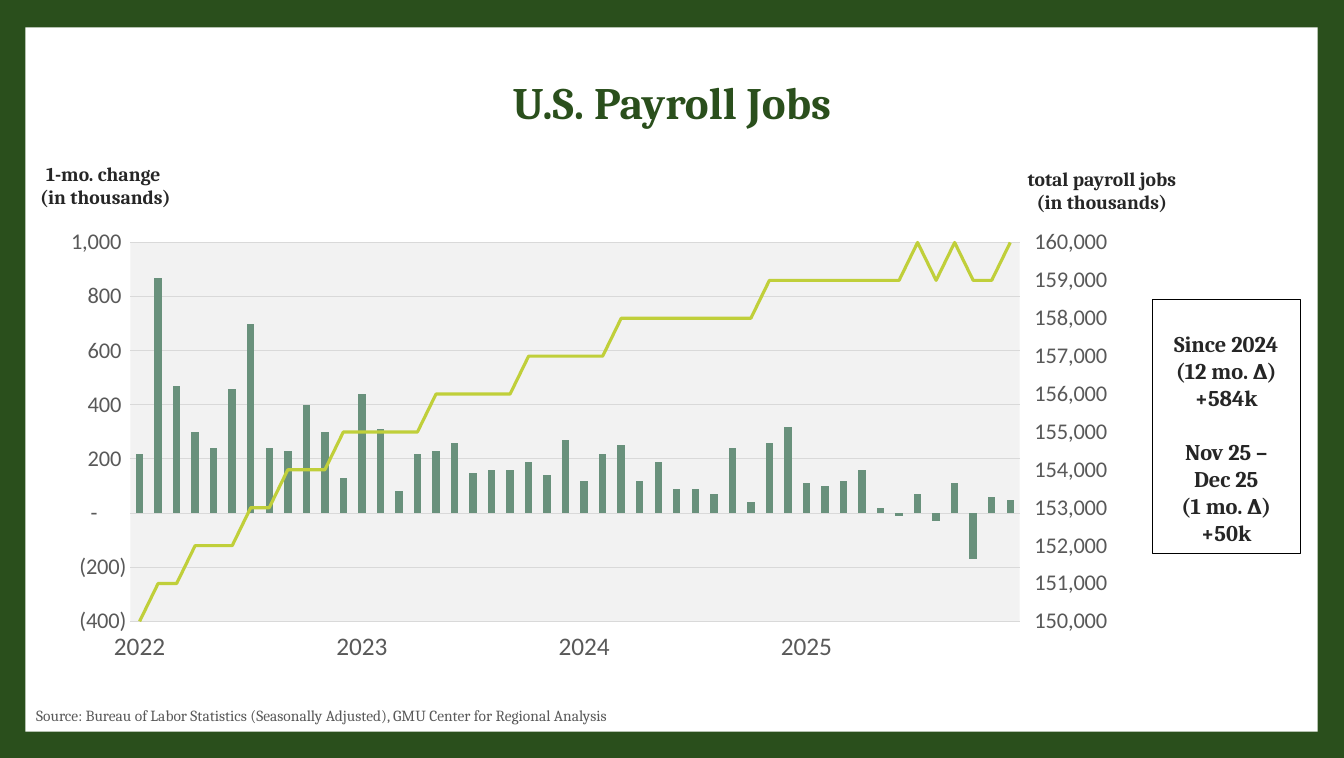
from copy import deepcopy

from lxml import etree
from pptx import Presentation
from pptx.chart.axis import ValueAxis
from pptx.chart.data import CategoryChartData
from pptx.dml.color import RGBColor
from pptx.enum import chart as ch, shapes, text
from pptx.oxml import parse_xml
from pptx.oxml.ns import nsdecls, qn
from pptx.util import Inches, Pt

GREEN = RGBColor(0x2A, 0x4F, 0x1C)
WHITE = RGBColor(0xFF, 0xFF, 0xFF)
BLACK = RGBColor(0, 0, 0)
DARK = RGBColor(0x26, 0x26, 0x26)
GRAY = RGBColor(0x59, 0x59, 0x59)
GRID = RGBColor(0xD9, 0xD9, 0xD9)
BAR = RGBColor(0x69, 0x91, 0x7C)
LIME = RGBColor(0xC0, 0xCF, 0x3A)

LEFT, CENTER = text.PP_ALIGN.LEFT, text.PP_ALIGN.CENTER
# Lines, left, top, width, height, size, bold, colour, alignment
LABELS = [
    (["1-mo. change ", "(in thousands)"], 0.28, 1.55, 1.53, 0.57, 14, True, DARK, CENTER),
    (["total payroll jobs", "(in thousands)"], 10.04, 1.6, 1.73, 0.57, 14, True, DARK, CENTER),
    (["U.S. Payroll Jobs"], 4.92, 0.69, 3.46, 0.64, 32, True, GREEN, CENTER),
    (["Source: Bureau of Labor Statistics (Seasonally Adjusted), GMU Center for Regional Analysis"],
     0.26, 6.94, 6.26, 0.29, 11, False, GRAY, LEFT),
]
SUMMARY = [
    ["Since 2024", "(12 mo. ∆)", "+584k"],
    ["Nov 25 –", "Dec 25", "(1 mo. ∆)", "+50k"],
]
YEARS = ["2022", "2023", "2024", "2025"]
MONTHLY_CHANGE = [
    220, 870, 470, 300, 240, 460, 700, 240, 230, 400, 300, 130,
    440, 310, 80, 220, 230, 260, 150, 160, 160, 190, 140, 270,
    120, 220, 250, 120, 190, 90, 90, 70, 240, 40, 260, 320,
    110, 100, 120, 160, 20, -10, 70, -30, 110, -170, 60, 50,
]
TOTAL_JOBS = [
    150000, 151000, 151000, 152000, 152000, 152000, 153000, 153000, 154000, 154000, 154000, 155000,
    155000, 155000, 155000, 155000, 156000, 156000, 156000, 156000, 156000, 157000, 157000, 157000,
    157000, 157000, 158000, 158000, 158000, 158000, 158000, 158000, 158000, 158000, 159000, 159000,
    159000, 159000, 159000, 159000, 159000, 159000, 160000, 159000, 160000, 159000, 159000, 160000,
]
NUMBER_FORMAT = '_(* #,##0_);_(* \\(#,##0\\);_(* "-"??_);_('
CHART = (0.43, 2.18, 10.8, 4.46)
PLOT = (1.29, 2.4, 8.8, 3.75)


def style(p, size, bold, color, align):
    p.alignment = align
    p.font.name, p.font.size, p.font.bold = "Cambria", Pt(size), bold
    p.font.color.rgb = color


def write(tf, lines, *look):
    for i, line in enumerate(lines):
        p = tf.paragraphs[0] if i == 0 else tf.add_paragraph()
        p.text = line
        style(p, *look)


def add_box(s, x, y, w, h):
    sp = s.shapes.add_shape(shapes.MSO_SHAPE.RECTANGLE, *map(Inches, (x, y, w, h)))
    sp.shadow.inherit = False
    return sp


def style_axis(axis, size):
    axis.major_tick_mark = axis.minor_tick_mark = ch.XL_TICK_MARK.NONE
    font = axis.tick_labels.font
    font.name, font.size, font.color.rgb = "Calibri", Pt(size), GRAY


def set_scale(axis, low, high, step):
    axis.minimum_scale, axis.maximum_scale, axis.major_unit = low, high, step


def move_to_right_axis(chart):
    """Turn the second series into a line on its own axis at the right."""
    area = chart._chartSpace.find(".//" + qn("c:plotArea"))
    bars, cat, val = (area.find(qn("c:" + tag)) for tag in ("barChart", "catAx", "valAx"))
    ser = bars.findall(qn("c:ser"))[1]
    for flag in ser.findall(qn("c:invertIfNegative")):
        ser.remove(flag)
    line = parse_xml(
        f'<c:lineChart {nsdecls("c")}><c:grouping val="standard"/><c:varyColors val="0"/>'
        '<c:marker val="1"/><c:axId val="5001"/><c:axId val="5002"/></c:lineChart>')
    line.insert(2, ser)
    bars.addnext(line)

    right_cat, right_val = deepcopy(cat), deepcopy(val)
    val.addnext(right_cat)
    right_cat.addnext(right_val)
    for ax, own, other in ((right_cat, "5001", "5002"), (right_val, "5002", "5001")):
        ax.find(qn("c:axId")).set("val", own)
        ax.find(qn("c:crossAx")).set("val", other)
    right_val.find(qn("c:axPos")).set("val", "r")
    right_val.find(qn("c:crosses")).set("val", "max")
    ValueAxis(right_cat).visible = False
    axis = ValueAxis(right_val)
    axis.has_major_gridlines = False
    axis.major_tick_mark = ch.XL_TICK_MARK.OUTSIDE
    set_scale(axis, 150000, 160000, 1000)


def place_plot(chart):
    """Fix the inner plot area at PLOT and give it a light fill."""
    area = chart._chartSpace.find(".//" + qn("c:plotArea"))
    for layout in area.findall(qn("c:layout")):
        area.remove(layout)
    shares = [(PLOT[0] - CHART[0]) / CHART[2], (PLOT[1] - CHART[1]) / CHART[3],
              PLOT[2] / CHART[2], PLOT[3] / CHART[3]]
    parts = "".join(f'<c:{k} val="{v:.4f}"/>' for k, v in zip("xywh", shares))
    area.insert(0, parse_xml(
        f'<c:layout {nsdecls("c")}><c:manualLayout><c:layoutTarget val="inner"/>'
        f'<c:xMode val="edge"/><c:yMode val="edge"/>{parts}</c:manualLayout></c:layout>'))
    area.append(parse_xml(
        f'<c:spPr {nsdecls("c", "a")}><a:solidFill><a:srgbClr val="F2F2F2"/></a:solidFill></c:spPr>'))


def add_jobs_chart(s):
    data = CategoryChartData()
    data.categories = [label for year in YEARS for label in [year] + [""] * 11]
    data.add_series("Series 1", MONTHLY_CHANGE)
    data.add_series("Series 2", TOTAL_JOBS)
    chart = s.shapes.add_chart(
        ch.XL_CHART_TYPE.COLUMN_CLUSTERED, *map(Inches, CHART), data).chart
    chart.has_legend = chart.has_title = False
    chart.font.name, chart.font.size = "Calibri", Pt(10)
    plot = chart.plots[0]
    plot.gap_width, plot.vary_by_categories = 150, False

    cat, val = chart.category_axis, chart.value_axis
    style_axis(cat, 18)
    cat.tick_label_position = ch.XL_TICK_LABEL_POSITION.LOW
    cat.format.line.color.rgb, cat.format.line.width = GRID, Pt(0.75)
    cat._element.find(".//" + qn("a:bodyPr")).set("rot", "-60000000")
    skip = etree.Element(qn("c:tickLblSkip"), val="12")
    cat._element.find(qn("c:noMultiLvlLbl")).addprevious(skip)
    style_axis(val, 16)
    val.format.line.fill.background()
    val.tick_labels.number_format = NUMBER_FORMAT
    val.tick_labels.number_format_is_linked = False
    grid = val.major_gridlines.format.line
    grid.color.rgb, grid.width = GRID, Pt(0.75)
    set_scale(val, -400, 1000, 200)

    move_to_right_axis(chart)
    place_plot(chart)
    change, total = chart.plots[0].series[0], chart.plots[1].series[0]
    change.format.fill.solid()
    change.format.fill.fore_color.rgb = BAR
    change.invert_if_negative = False
    total.format.line.color.rgb, total.format.line.width = LIME, Pt(2.25)
    total.marker.style = ch.XL_MARKER_STYLE.NONE
    total.smooth = False


def main():
    prs = Presentation()
    prs.slide_width, prs.slide_height = Inches(13.3), Inches(7.5)
    s = prs.slides.add_slide(prs.slide_layouts[6])
    s.background.fill.solid()
    s.background.fill.fore_color.rgb = GREEN
    page = add_box(s, 0.25, 0.27, 12.79, 6.97)
    page.fill.solid()
    page.fill.fore_color.rgb = WHITE
    page.line.fill.background()

    for lines, x, y, w, h, *look in LABELS:
        tf = s.shapes.add_textbox(*map(Inches, (x, y, w, h))).text_frame
        tf.word_wrap = False
        write(tf, lines, *look)

    box = add_box(s, 11.4, 2.96, 1.47, 2.52)
    box.fill.background()
    box.line.color.rgb, box.line.width = BLACK, Pt(0.5)
    tf = box.text_frame
    tf.word_wrap, tf.vertical_anchor = True, text.MSO_ANCHOR.BOTTOM
    tf.margin_bottom = Inches(0.08)
    write(tf, sum(SUMMARY, []), 16, True, DARK, CENTER)
    tf.paragraphs[len(SUMMARY[0])].space_before = Pt(19)

    add_jobs_chart(s)
    prs.save("out.pptx")


if __name__ == "__main__":
    main()
